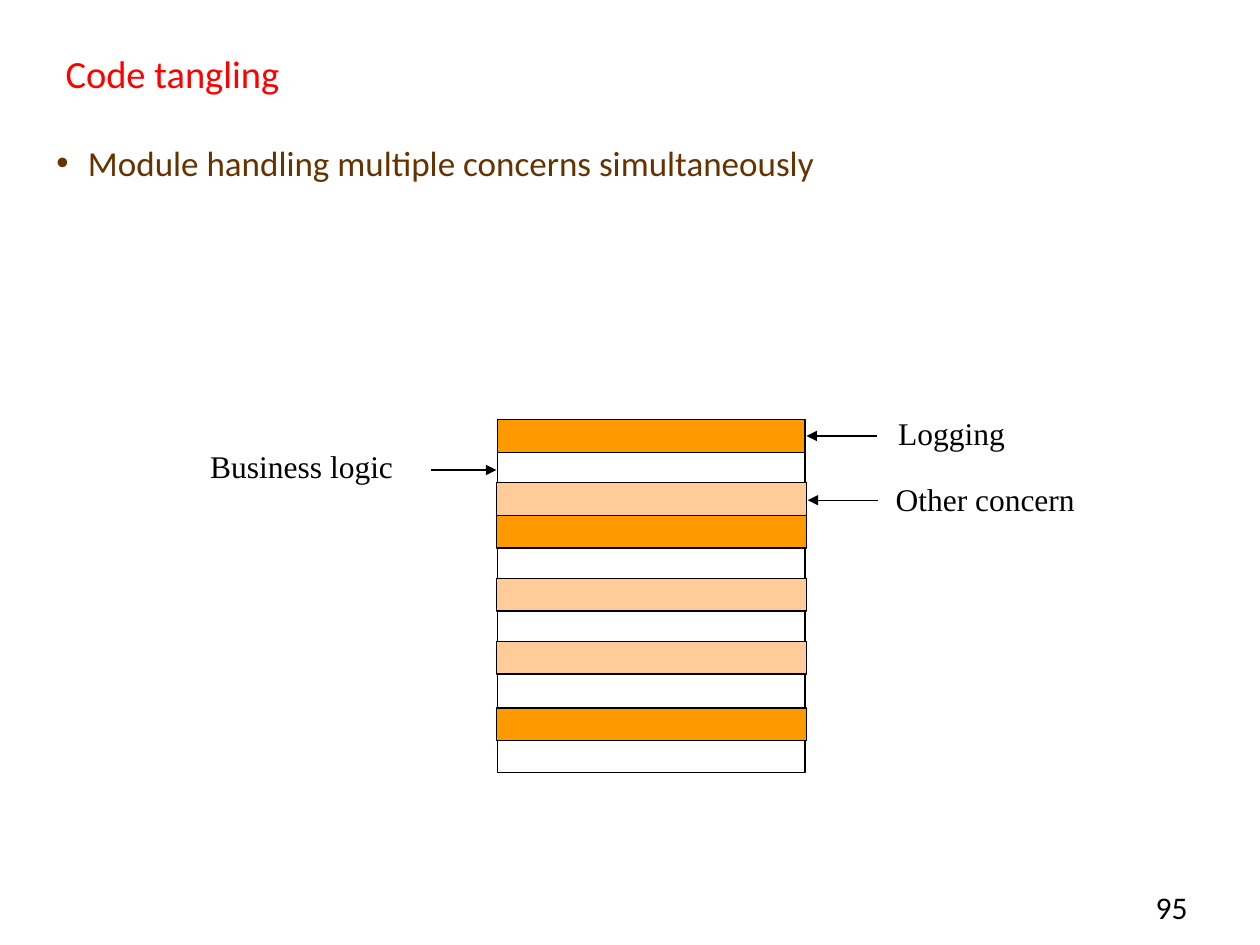
"""Build the slide on code tangling: one module striped with several concerns."""
from lxml import etree
from pptx import Presentation
from pptx import util as u
from pptx.dml.color import RGBColor
from pptx.enum import shapes, text
from pptx.oxml.ns import qn

COLORS = {"title": "FF0000", "body": "663300", "ink": "000000",
          "logging": "FF9900", "other": "FFCC99"}

presentation = Presentation()
presentation.slide_width, presentation.slide_height = u.Inches(10), u.Inches(7.5)
column = presentation.slide_width / 100
row = presentation.slide_height / 75
slide = presentation.slides.add_slide(presentation.slide_layouts[5])


def grid(left, top, width, height):
    return [round(n * unit) for n, unit in
            zip((left, top, width, height), (column, row, column, row))]


def write(words, box, shape=None, size=18, font="Calibri", color="ink",
          align=text.PP_ALIGN.LEFT, anchor=text.MSO_ANCHOR.TOP, wrap=True):
    shape = shape or slide.shapes.add_textbox(*grid(*box))
    shape.left, shape.top, shape.width, shape.height = grid(*box)
    frame = shape.text_frame
    frame.auto_size = text.MSO_AUTO_SIZE.NONE if wrap else text.MSO_AUTO_SIZE.SHAPE_TO_FIT_TEXT
    frame.word_wrap, frame.vertical_anchor = wrap, anchor
    paragraph = frame.paragraphs[0]
    paragraph.alignment = align
    run = paragraph.add_run()
    run.text = words
    run.font.size, run.font.name = u.Pt(size), font
    run.font.color.rgb = RGBColor.from_string(COLORS[color])
    return paragraph


write("95 ", (88.3, 70, 7.5, 5), align=text.PP_ALIGN.RIGHT)
write("Code tangling", (4.2, 3.3, 90.8, 5), shape=slide.shapes.title,
      size=22, color="title", anchor=text.MSO_ANCHOR.MIDDLE)
bullet = write("Module handling multiple concerns simultaneously",
               (3.5, 10.7, 91.7, 56.7), size=20, color="body")
properties = bullet._p.get_or_add_pPr()
properties.set("marL", str(u.Inches(0.25)))
properties.set("indent", str(-u.Inches(0.25)))
etree.SubElement(properties, qn("a:buFont")).set("typeface", "Arial")
etree.SubElement(properties, qn("a:buChar")).set("char", "•")

module = (39.5, 33.4, 24.4, 27.9, None)
stripes = [(39.5, 33.3, 24.4, 2.6, "logging")]
stripes += [(39.4, top, 24.6, 2.6, concern)
            for concern, tops in (("logging", (40.9, 56.2)), ("other", (38.3, 45.9, 50.9)))
            for top in tops]
for *box, concern in [module, *stripes]:
    shape = slide.shapes.add_shape(shapes.MSO_SHAPE.RECTANGLE, *grid(*box))
    shape.shadow.inherit = False
    shape.line.color.rgb = RGBColor.from_string(COLORS["ink"])
    shape.line.width = u.Pt(0.75)
    if concern:
        shape.fill.solid()
        shape.fill.fore_color.rgb = RGBColor.from_string(COLORS[concern])
    else:
        shape.fill.background()

labels = [("Business logic", (15.7, 35, 16.5, 4), 34.2, 39.4, 37.3),
          ("Logging", (70.3, 32.4, 10.5, 4), 69.6, 64, 34.6),
          ("Other concern", (70.1, 37.6, 16.2, 4), 69.7, 64.1, 39.7)]
for words, box, start, end, level in labels:
    write(words, box, font="Times New Roman", wrap=False)
    begin_x, begin_y, end_x, end_y = grid(start, level, end, level)
    arrow = slide.shapes.add_connector(shapes.MSO_CONNECTOR.STRAIGHT,
                                       begin_x, begin_y, end_x, end_y)
    arrow.line.color.rgb = RGBColor.from_string(COLORS["ink"])
    arrow.line.width = u.Pt(0.75)
    etree.SubElement(arrow.line._get_or_add_ln(), qn("a:tailEnd")).set("type", "triangle")
    etree.SubElement(arrow._element.spPr, qn("a:effectLst"))

presentation.save("out.pptx")
